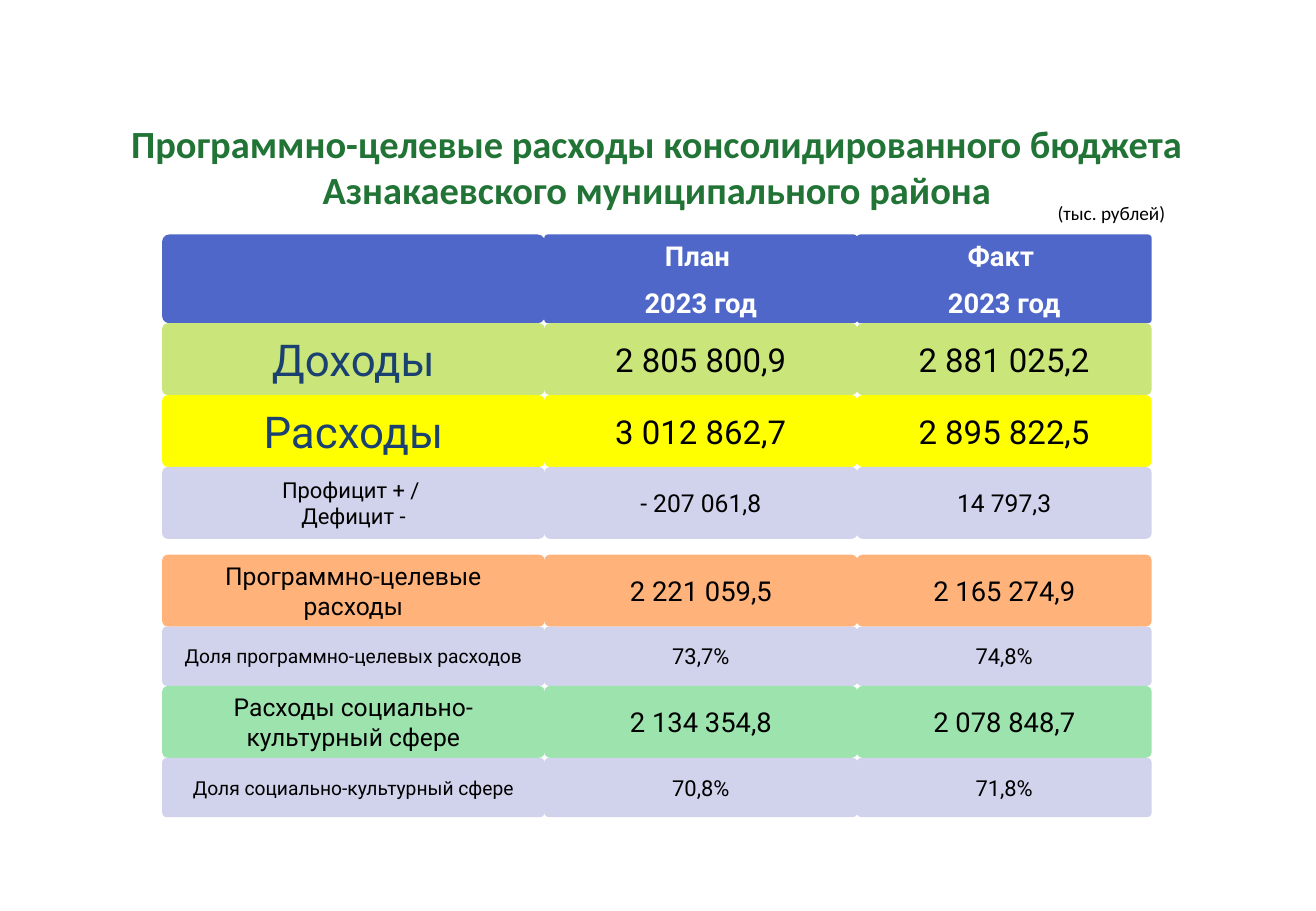
from dataclasses import dataclass

from pptx import Presentation
from pptx.dml.color import RGBColor
from pptx.enum.shapes import MSO_SHAPE
from pptx.enum.text import MSO_ANCHOR, MSO_AUTO_SIZE, PP_ALIGN
from pptx.util import Pt

ROUNDED = MSO_SHAPE.ROUNDED_RECTANGLE
TOP, MIDDLE = MSO_ANCHOR.TOP, MSO_ANCHOR.MIDDLE
CENTER = PP_ALIGN.CENTER
NO_FIT = MSO_AUTO_SIZE.NONE


@dataclass(frozen=True)
class Theme:
    heading_font: str = "Calibri"
    cell_font: str = "Roboto"
    title: str = "217436"
    text: str = "000000"
    accent_text: str = "1B4171"
    header_text: str = "FFFFFF"
    header: str = "4E67C8"
    income: str = "CAE67B"
    spending: str = "FFFF00"
    programme: str = "FFB37A"
    social: str = "9DE3AE"
    plain: str = "D0D3EB"
    title_size: float = 22.8
    huge: float = 26
    large: float = 19.5
    medium: float = 16.2
    regular: float = 14.6
    small: float = 13
    tiny: float = 11.4
    space_after: float = 8.1


class SlideBuilder:
    def __init__(self, slide, theme):
        self.slide = slide
        self.theme = theme

    def set_text(self, sp, text, size, color, font, bold=False, space_after=0):
        tf = sp.text_frame
        tf.text = text
        for p in tf.paragraphs:
            p.alignment = CENTER
            p.space_after = Pt(space_after)
            for r in p.runs:
                r.font.name = font
                r.font.size = Pt(size)
                r.font.bold = bold
                r.font.color.rgb = RGBColor.from_string(color)

    def heading(self, sp, text, size, color, bold=False):
        """Fill an unwrapped, top-anchored text object."""
        tf = sp.text_frame
        tf.word_wrap = False
        tf.auto_size = NO_FIT
        tf.vertical_anchor = TOP
        self.set_text(sp, text, size, color, self.theme.heading_font, bold)

    def title(self, text, left, top, width, height):
        sp = self.slide.shapes.title
        sp.left, sp.top, sp.width, sp.height = map(Pt, (left, top, width, height))
        self.heading(sp, text, self.theme.title_size, self.theme.title, True)

    def label(self, text, left, top, width, height):
        sp = self.slide.shapes.add_textbox(*map(Pt, (left, top, width, height)))
        self.heading(sp, text, self.theme.tiny, self.theme.text)

    def cell(self, box, fill, text, size, color, bold=False, space_after=0,
             rounding=0.083):
        sp = self.slide.shapes.add_shape(ROUNDED, *map(Pt, box))
        sp.shadow.inherit = False
        sp.adjustments[0] = rounding
        sp.fill.solid()
        sp.fill.fore_color.rgb = RGBColor.from_string(fill)
        sp.line.fill.background()
        sp.text_frame.word_wrap = True
        sp.text_frame.vertical_anchor = MIDDLE
        if text:
            self.set_text(sp, text, size, color, self.theme.cell_font, bold, space_after)


def main():
    t = Theme()
    prs = Presentation()
    prs.slide_width, prs.slide_height = Pt(780), Pt(540)
    s = SlideBuilder(prs.slides.add_slide(prs.slide_layouts[5]), t)

    s.title("Программно-целевые расходы консолидированного бюджета\n"
            "Азнакаевского муниципального района", 68.4, 67.7, 642.2, 62.6)

    columns = [(96.1, 226.8), (322.6, 185.6), (507.8, 174.8)]
    table_top, header_height, tall, short, gap = 139, 52.6, 42.6, 35.2, 9.4

    headers = ["", "План \n2023 год", "Факт \n2023 год"]
    for (left, width), text in zip(columns, headers):
        s.cell((left, table_top, width, header_height), t.header, text, t.medium,
               t.header_text, True, t.space_after, 0.04 if text else 0.08)

    # gap above, height, fill, name, name size, name colour, plan, fact, value size
    rows = [
        (0, tall, t.income, "Доходы", t.huge, t.accent_text,
         "2 805 800,9", "2 881 025,2", t.large),
        (0, tall, t.spending, "Расходы", t.huge, t.accent_text,
         "3 012 862,7", "2 895 822,5", t.large),
        (0, tall, t.plain, "Профицит + / \nДефицит -", t.small, t.text,
         "- 207 061,8", "14 797,3", t.regular),
        (gap, tall, t.programme, "Программно-целевые расходы", t.regular, t.text,
         "2 221 059,5", "2 165 274,9", t.medium),
        (0, short, t.plain, "Доля программно-целевых расходов", t.tiny, t.text,
         "73,7%", "74,8%", t.small),
        (0, tall, t.social, "Расходы социально-культурный сфере", t.regular, t.text,
         "2 134 354,8", "2 078 848,7", t.medium),
        (0, short, t.plain, "Доля социально-культурный сфере", t.tiny, t.text,
         "70,8%", "71,8%", t.small),
    ]
    top = table_top + header_height
    for space, height, fill, name, name_size, name_color, plan, fact, size in rows:
        top += space
        boxes = [(left, top, width, height) for left, width in columns]
        s.cell(boxes[0], fill, name, name_size, name_color, rounding=0.08)
        for box, value in zip(boxes[1:], (plan, fact)):
            s.cell(box, fill, value, size, t.text, space_after=t.space_after,
                   rounding=0.08)
        top += height

    s.label("(тыс. рублей)", 619.2, 115.9, 79.2, 20.9)
    prs.save("out.pptx")


if __name__ == "__main__":
    main()
